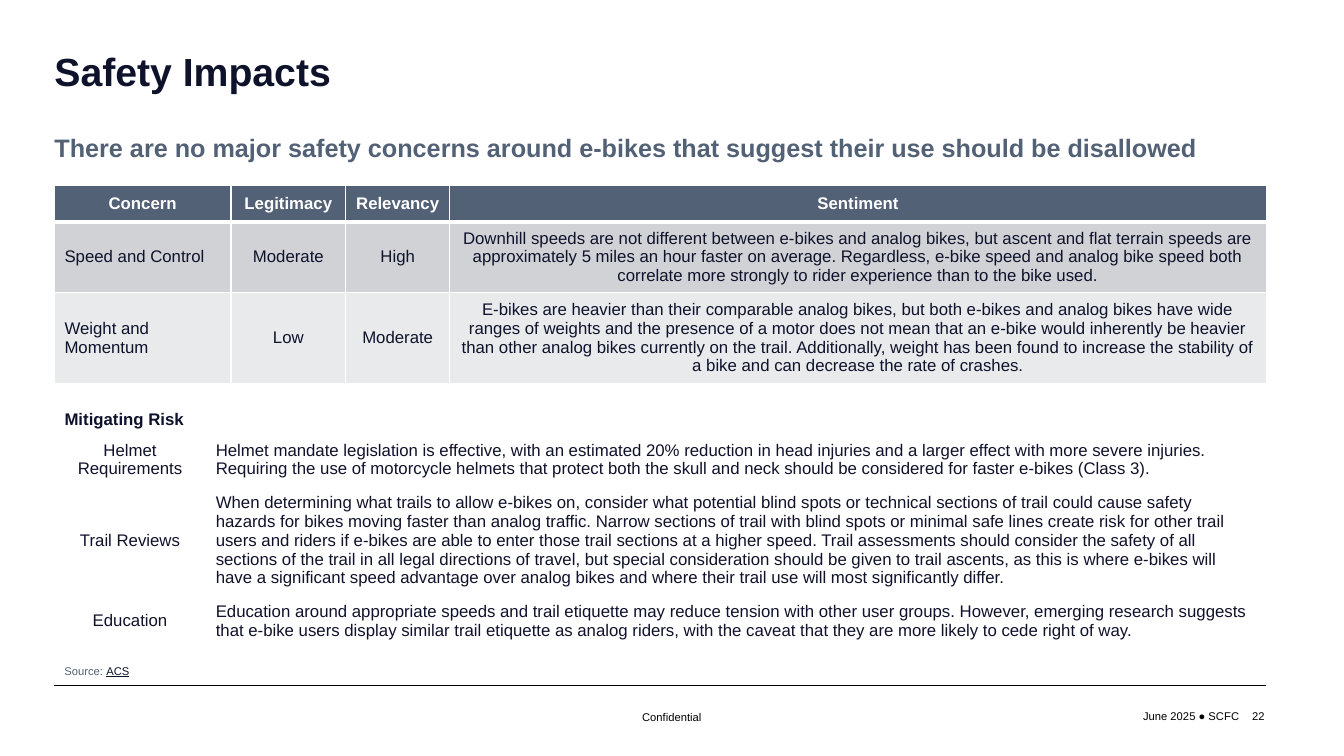
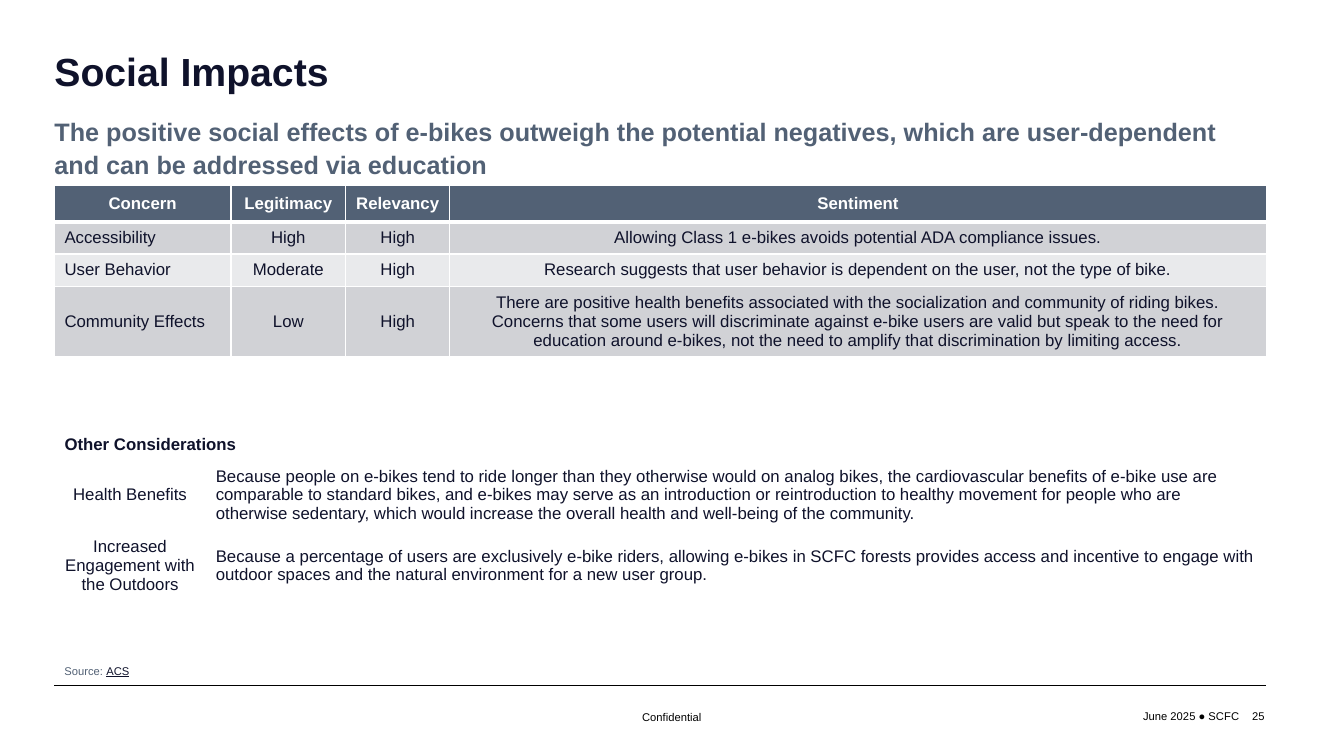
from lxml.etree import SubElement
from pptx import Presentation
from pptx.dml.color import RGBColor
from pptx.enum.shapes import MSO_CONNECTOR
from pptx.enum.text import MSO_ANCHOR, PP_ALIGN
from pptx.oxml.ns import qn
from pptx.util import Emu, Pt

PX = 9144  # 100 px to the inch
FONT = "Arial"
NAVY, SLATE, BLACK, WHITE = "0F122B", "526175", "000000", "FFFFFF"
BANDS = ("D1D2D6", "E9EAEC")

LEFT, CONTENT_WIDTH = 54, 1202
CONCERN_TOP = 184
CONCERN_COLUMNS = (175, 114, 103, 810)
DETAIL_COLUMNS = (150, 1052)
HEADER_HEIGHT, DETAIL_HEIGHT = 36, 27
CONCERN_HEADINGS = ("Concern", "Legitimacy", "Relevancy", "Sentiment")

SLIDES = (
    dict(
        title="Safety Impacts",
        number="22",
        message="There are no major safety concerns around e-bikes that suggest their use should be disallowed",
        concern_height=53,
        concerns=(
            ("Speed and Control", "Moderate", "High",
             "Downhill speeds are not different between e-bikes and analog bikes, but ascent and flat "
             "terrain speeds are approximately 5 miles an hour faster on average. Regardless, e-bike "
             "speed and analog bike speed both correlate more strongly to rider experience than to the "
             "bike used."),
            ("Weight and Momentum", "Low", "Moderate",
             "E-bikes are heavier than their comparable analog bikes, but both e-bikes and analog bikes "
             "have wide ranges of weights and the presence of a motor does not mean that an e-bike would "
             "inherently be heavier than other analog bikes currently on the trail. Additionally, weight "
             "has been found to increase the stability of a bike and can decrease the rate of crashes."),
        ),
        detail_top=401,
        detail_heading="Mitigating Risk",
        details=(
            ("Helmet Requirements",
             "Helmet mandate legislation is effective, with an estimated 20% reduction in head injuries "
             "and a larger effect with more severe injuries. Requiring the use of motorcycle helmets that "
             "protect both the skull and neck should be considered for faster e-bikes (Class 3)."),
            ("Trail Reviews",
             "When determining what trails to allow e-bikes on, consider what potential blind spots or "
             "technical sections of trail could cause safety hazards for bikes moving faster than analog "
             "traffic. Narrow sections of trail with blind spots or minimal safe lines create risk for "
             "other trail users and riders if e-bikes are able to enter those trail sections at a higher "
             "speed. Trail assessments should consider the safety of all sections of the trail in all "
             "legal directions of travel, but special consideration should be given to trail ascents, as "
             "this is where e-bikes will have a significant speed advantage over analog bikes and where "
             "their trail use will most significantly differ."),
            ("Education",
             "Education around appropriate speeds and trail etiquette may reduce tension with other user "
             "groups. However, emerging research suggests that e-bike users display similar trail "
             "etiquette as analog riders, with the caveat that they are more likely to cede right of way."),
        ),
    ),
    dict(
        title="Social Impacts",
        number="25",
        message="The positive social effects of e-bikes outweigh the potential negatives, which are "
                "user-dependent and can be addressed via education",
        concern_height=32,
        concerns=(
            ("Accessibility", "High", "High",
             "Allowing Class 1 e-bikes avoids potential ADA compliance issues."),
            ("User Behavior", "Moderate", "High",
             "Research suggests that user behavior is dependent on the user, not the type of bike."),
            ("Community Effects", "Low", "High",
             "There are positive health benefits associated with the socialization and community of "
             "riding bikes. Concerns that some users will discriminate against e-bike users are valid but "
             "speak to the need for education around e-bikes, not the need to amplify that discrimination "
             "by limiting access."),
        ),
        detail_top=426,
        detail_heading="Other Considerations",
        details=(
            ("Health Benefits",
             "Because people on e-bikes tend to ride longer than they otherwise would on analog bikes, "
             "the cardiovascular benefits of e-bike use are comparable to standard bikes, and e-bikes may "
             "serve as an introduction or reintroduction to healthy movement for people who are otherwise "
             "sedentary, which would increase the overall health and well-being of the community."),
            ("Increased Engagement with the Outdoors",
             "Because a percentage of users are exclusively e-bike riders, allowing e-bikes in SCFC "
             "forests provides access and incentive to engage with outdoor spaces and the natural "
             "environment for a new user group."),
        ),
    ),
)


def px(length):
    return Emu(length * PX)


def rgb(color):
    return RGBColor.from_string(color)


def style_font(font, size, color, bold=False):
    font.name = FONT
    font.size = Pt(size)
    font.bold = bold
    font.color.rgb = rgb(color)


def add_text(slide, box, text, size, color, bold=False, align=PP_ALIGN.LEFT,
             anchor=MSO_ANCHOR.TOP, insets=(10, 5), line_spacing=1.0):
    """Add a one-paragraph text box; box is left, top, width, height."""
    text_frame = slide.shapes.add_textbox(*map(px, box)).text_frame
    text_frame.word_wrap = True
    text_frame.vertical_anchor = anchor
    text_frame.margin_left = text_frame.margin_right = px(insets[0])
    text_frame.margin_top = text_frame.margin_bottom = px(insets[1])
    text_frame.text = text
    paragraph = text_frame.paragraphs[0]
    paragraph.alignment = align
    paragraph.line_spacing = line_spacing
    style_font(paragraph.runs[0].font, size, color, bold)
    return paragraph


def add_rule(slide, top):
    line = slide.shapes.add_connector(
        MSO_CONNECTOR.STRAIGHT, px(LEFT), px(top), px(LEFT + CONTENT_WIDTH), px(top))
    line.line.color.rgb = rgb(BLACK)
    line.line.width = Pt(1)
    SubElement(line._element.spPr, qn("a:effectLst"))


def add_frame(slide, page):
    """Add the title, message, source and footer that every slide carries."""
    add_rule(slide, 680)
    add_text(slide, (1119, 699, 120, 24), "June 2025 ● SCFC", 8, BLACK, align=PP_ALIGN.RIGHT)
    add_text(slide, (627, 700, 100, 24), "Confidential", 8, BLACK)
    add_text(slide, (964, 690, 300, 40), page["number"], 8, BLACK,
             align=PP_ALIGN.RIGHT, anchor=MSO_ANCHOR.MIDDLE)
    add_text(slide, (LEFT, 42, CONTENT_WIDTH, 63), page["title"], 28, NAVY, bold=True,
             insets=(0, 0), line_spacing=1.1)
    add_text(slide, (LEFT, 125, 1156, 40), page["message"], 18, SLATE, bold=True,
             anchor=MSO_ANCHOR.MIDDLE, insets=(0, 5), line_spacing=1.1)
    source = add_text(slide, (LEFT, 654, CONTENT_WIDTH, 24), "Source: ", 8, SLATE)
    citation = source.add_run()
    citation.text = "ACS"
    style_font(citation.font, 8, NAVY)
    citation.font.underline = True


def add_plain_table(slide, top, column_widths, row_heights):
    table = slide.shapes.add_table(
        len(row_heights), len(column_widths), px(LEFT), px(top),
        px(sum(column_widths)), px(sum(row_heights))).table
    table.first_row = table.horz_banding = False
    for column, width in zip(table.columns, column_widths):
        column.width = px(width)
    for row, height in zip(table.rows, row_heights):
        row.height = px(height)
    for cell in table.iter_cells():
        cell.fill.background()
    return table


def write_cell(cell, text, color=NAVY, bold=False, align=PP_ALIGN.LEFT):
    cell.vertical_anchor = MSO_ANCHOR.MIDDLE
    cell.text_frame.text = text
    paragraph = cell.text_frame.paragraphs[0]
    paragraph.alignment = align
    style_font(paragraph.runs[0].font, 12, color, bold)


def fill_cell(cell, color, top_width, bottom_width):
    """Fill a cell and give it white borders, 1 pt wide at the sides."""
    properties = cell._tc.get_or_add_tcPr()
    for child in list(properties):
        properties.remove(child)
    for side, width in (("L", 1), ("R", 1), ("T", top_width), ("B", bottom_width)):
        border = SubElement(properties, qn(f"a:ln{side}"), w=str(Pt(width)))
        SubElement(SubElement(border, qn("a:solidFill")), qn("a:srgbClr"), val=WHITE)
    cell.fill.solid()
    cell.fill.fore_color.rgb = rgb(color)


def add_concern_table(slide, concerns, row_height):
    heights = [HEADER_HEIGHT] + [row_height] * len(concerns)
    table = add_plain_table(slide, CONCERN_TOP, CONCERN_COLUMNS, heights)
    for row, texts in enumerate((CONCERN_HEADINGS, *concerns)):
        is_header = row == 0
        for column, text in enumerate(texts):
            cell = table.cell(row, column)
            fill_cell(cell, SLATE if is_header else BANDS[(row - 1) % 2],
                      top_width=3 if row == 1 else 1, bottom_width=3 if is_header else 1)
            write_cell(cell, text, WHITE if is_header else NAVY, is_header,
                       PP_ALIGN.CENTER if is_header or column else PP_ALIGN.LEFT)


def add_detail_table(slide, top, heading, details):
    heights = [DETAIL_HEIGHT] * (len(details) + 1)
    table = add_plain_table(slide, top, DETAIL_COLUMNS, heights)
    table.cell(0, 0).merge(table.cell(0, 1))
    write_cell(table.cell(0, 0), heading, bold=True)
    for row, (topic, explanation) in enumerate(details, start=1):
        write_cell(table.cell(row, 0), topic, align=PP_ALIGN.CENTER)
        write_cell(table.cell(row, 1), explanation)


def main():
    presentation = Presentation()
    presentation.slide_width, presentation.slide_height = px(1333), px(750)
    for page in SLIDES:
        slide = presentation.slides.add_slide(presentation.slide_layouts[6])
        add_frame(slide, page)
        add_concern_table(slide, page["concerns"], page["concern_height"])
        add_detail_table(slide, page["detail_top"], page["detail_heading"], page["details"])
    presentation.save("out.pptx")


if __name__ == "__main__":
    main()
